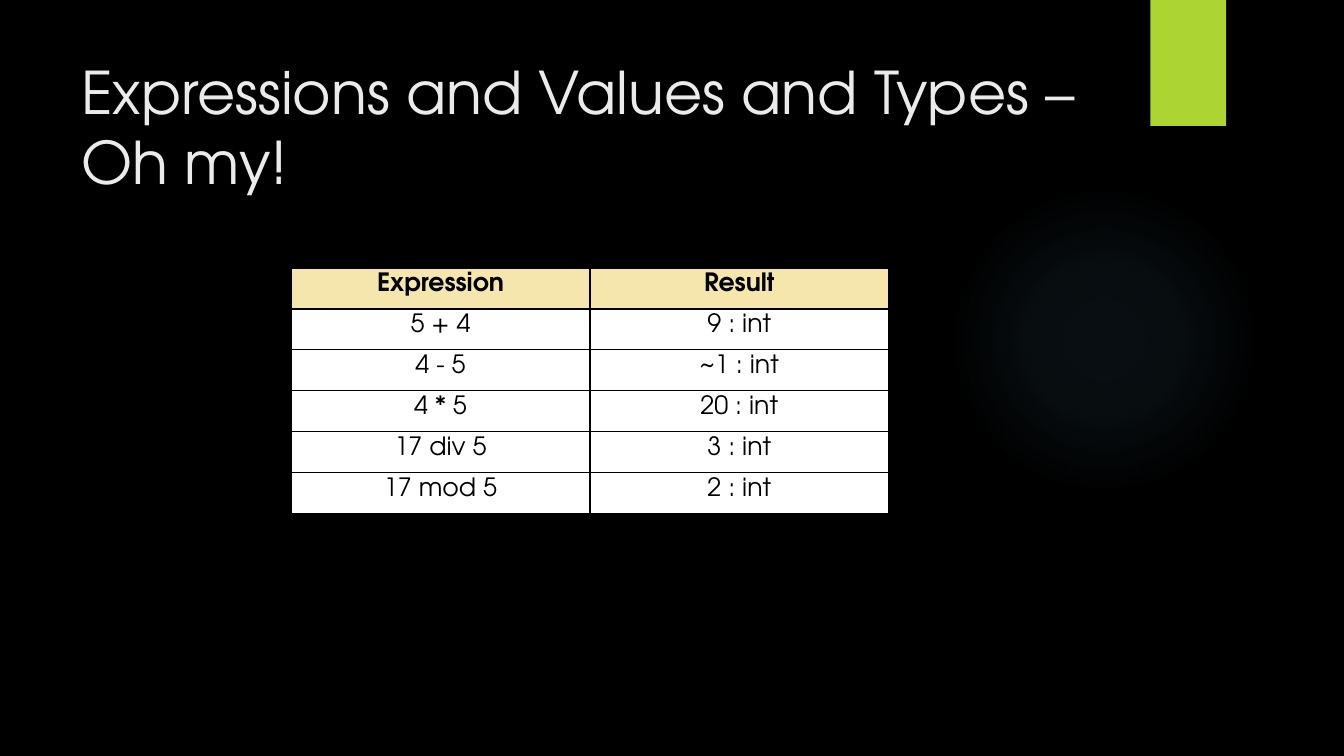
import pptx
import pptx.dml.color
import pptx.enum.shapes
import pptx.enum.text
import pptx.oxml
import pptx.oxml.ns
import pptx.util

Pt = pptx.util.Pt
RGBColor = pptx.dml.color.RGBColor
Shape = pptx.enum.shapes.MSO_SHAPE
Align = pptx.enum.text.PP_ALIGN
Anchor = pptx.enum.text.MSO_ANCHOR

BLACK = RGBColor(0x00, 0x00, 0x00)
WHITE = RGBColor(0xFF, 0xFF, 0xFF)
TITLE_GREY = RGBColor(0xEB, 0xEB, 0xEB)
GREEN = RGBColor(0xAC, 0xD4, 0x33)
GLOW_BLUE = RGBColor(0x7A, 0xC4, 0xF0)
HEADER_CREAM = RGBColor(0xF5, 0xE6, 0xAD)

FONT = "TeX Gyre Adventor"
DRAWING = pptx.oxml.ns.nsdecls("a")
RESULTS = [
    ("Expression", "Result"),
    ("5 + 4", "9 : int"),
    ("4 - 5", "~1 : int"),
    ("4 * 5", "20 : int"),
    ("17 div 5", "3 : int"),
    ("17 mod 5", "2 : int"),
]


def write_text(frame, text, size, color, bold=False, align=Align.LEFT):
    para = frame.paragraphs[0]
    para.alignment = align
    span = para.add_run()
    span.text = text
    span.font.name = FONT
    span.font.size = Pt(size)
    span.font.bold = bold
    span.font.color.rgb = color


def add_plain_shape(page, kind, left, top, width, height):
    shape = page.shapes.add_shape(kind, Pt(left), Pt(top), Pt(width), Pt(height))
    shape.shadow.inherit = False
    shape.line.fill.background()
    return shape


def add_glow(page, left, top, size):
    glow = add_plain_shape(page, Shape.OVAL, left, top, size, size)
    stops = "".join(
        f'<a:gs pos="{place * 1000}"><a:srgbClr val="{GLOW_BLUE}">'
        f'<a:alpha val="{opacity * 1000}"/></a:srgbClr></a:gs>'
        for place, opacity in [(0, 7), (36, 6), (69, 0), (100, 0)]
    )
    gradient = pptx.oxml.parse_xml(
        f'<a:gradFill {DRAWING} rotWithShape="1"><a:gsLst>{stops}</a:gsLst>'
        '<a:path path="circle"><a:fillToRect l="50000" t="50000" r="50000" b="50000"/>'
        "</a:path></a:gradFill>"
    )
    geometry = glow.element.spPr.find(pptx.oxml.ns.qn("a:prstGeom"))
    geometry.addnext(gradient)


def add_ribbon(page, left, top, width, height):
    ribbon = add_plain_shape(page, Shape.RECTANGLE, left, top, width, height)
    ribbon.fill.solid()
    ribbon.fill.fore_color.rgb = GREEN
    effects = ribbon.element.spPr.find(pptx.oxml.ns.qn("a:effectLst"))
    effects.append(pptx.oxml.parse_xml(
        f'<a:outerShdw {DRAWING} blurRad="{Pt(3)}" dist="{Pt(2)}" dir="5400000">'
        f'<a:srgbClr val="{BLACK}"><a:alpha val="45000"/></a:srgbClr></a:outerShdw>'
    ))


def place_title(page, text, left, top, width, height):
    title = page.shapes.title
    title.left, title.top, title.width, title.height = map(Pt, (left, top, width, height))
    frame = title.text_frame
    frame.word_wrap = True
    frame.auto_size = pptx.enum.text.MSO_AUTO_SIZE.NONE
    frame.vertical_anchor = Anchor.TOP
    write_text(frame, text, 42, TITLE_GREY)
    # Keep the title in front of the decoration
    page.shapes.element.append(title.element)


def border_cell(cell):
    properties = cell._tc.get_or_add_tcPr()
    for index, side in enumerate(("lnL", "lnR", "lnT", "lnB")):
        properties.insert(index, pptx.oxml.parse_xml(
            f'<a:{side} {DRAWING} w="{Pt(1)}"><a:solidFill>'
            f'<a:srgbClr val="{BLACK}"/></a:solidFill></a:{side}>'
        ))


def add_results_table(page, rows, left, top, width, height):
    frame = page.shapes.add_table(
        len(rows), len(rows[0]), Pt(left), Pt(top), Pt(width), Pt(height))
    table = frame.table
    for row_index, row in enumerate(rows):
        header = row_index == 0
        for column_index, text in enumerate(row):
            cell = table.cell(row_index, column_index)
            cell.margin_top = Pt(3.6)
            cell.margin_bottom = 0
            cell.vertical_anchor = Anchor.TOP
            cell.fill.solid()
            cell.fill.fore_color.rgb = HEADER_CREAM if header else WHITE
            border_cell(cell)
            write_text(cell.text_frame, text, 18, BLACK, bold=header, align=Align.CENTER)


def build_table_slide(deck, title, rows):
    page = deck.slides.add_slide(deck.slide_layouts[5])
    page.background.fill.solid()
    page.background.fill.fore_color.rgb = BLACK
    # Decoration
    add_glow(page, 677.5, 131.75, 221.75)
    add_ribbon(page, 821.75, 0, 54, 90)
    # Content
    place_title(page, title, 51, 36, 741, 110)
    add_results_table(page, rows, 208, 191.5, 426.75, 175.25)


def main():
    deck = pptx.Presentation()
    deck.slide_width, deck.slide_height = Pt(960), Pt(540)
    build_table_slide(deck, "Expressions and Values and Types – Oh my!", RESULTS)
    deck.save("out.pptx")


if __name__ == "__main__":
    main()
